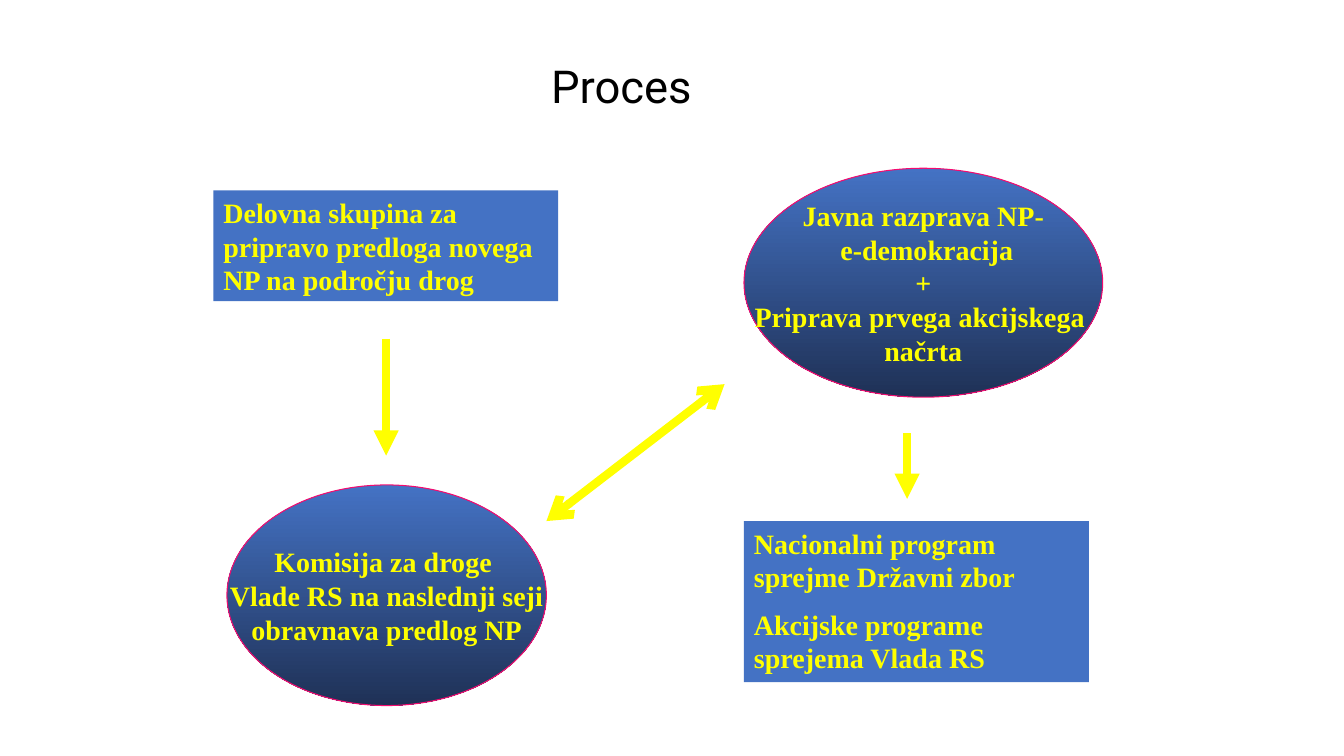
from lxml.etree import SubElement
from pptx import Presentation
from pptx.dml.color import RGBColor
from pptx.enum.shapes import MSO_CONNECTOR, MSO_SHAPE
from pptx.enum.text import MSO_ANCHOR as ANCHOR, PP_ALIGN as ALIGN
from pptx.oxml.ns import qn
from pptx.util import Cm, Pt

COLORS = {
    "box": "4472C4",
    "shade": "1F3156",
    "outline": "F50B6F",
    "accent": "FFFF00",
    "title": "000000",
}


def rgb(name):
    return RGBColor.from_string(COLORS[name])


def write(shape, lines, font="Times New Roman", size=20, color="accent", bold=True,
          align=ALIGN.LEFT, anchor=ANCHOR.TOP, wrap=True, gap=0, spacing=1.0):
    """Fill a shape with one paragraph per line; gap is the space between them in points."""
    frame = shape.text_frame
    frame.word_wrap = wrap
    frame.vertical_anchor = anchor
    for index, line in enumerate(lines):
        paragraph = frame.add_paragraph() if index else frame.paragraphs[0]
        paragraph.alignment = align
        paragraph.line_spacing = spacing
        paragraph.space_before = Pt(gap if index else 0)
        run = paragraph.add_run()
        run.text = line
        run.font.name = font
        run.font.size = Pt(size)
        run.font.bold = bold
        run.font.color.rgb = rgb(color)


prs = Presentation()
prs.slide_width, prs.slide_height = Cm(33.87), Cm(19.05)
slide = prs.slides.add_slide(prs.slide_layouts[6])
shapes = slide.shapes

title = shapes.add_textbox(Cm(10.67), Cm(1.47), Cm(9.98), Cm(1.55))
write(title, ["Proces"], font="Roboto", size=32.4, color="title", bold=False,
      align=ALIGN.CENTER, anchor=ANCHOR.MIDDLE, spacing=0.9)

# Rectangles: left, top, width, height, paragraphs
institutions = [
    (5.38, 4.8, 8.69, 2.79,
     ["Delovna skupina za pripravo predloga novega NP na področju drog"]),
    (18.75, 13.13, 8.69, 4.06,
     ["Nacionalni program sprejme Državni zbor",
      "Akcijske programe sprejema Vlada RS"]),
]
for left, top, width, height, lines in institutions:
    box = shapes.add_shape(MSO_SHAPE.RECTANGLE, Cm(left), Cm(top), Cm(width), Cm(height))
    box.shadow.inherit = False
    box.fill.solid()
    box.fill.fore_color.rgb = rgb("box")
    box.line.fill.background()
    write(box, lines, gap=10)

# Ellipses: left, top, width, height, paragraphs
discussions = [
    (5.72, 12.22, 8.05, 5.56,
     ["Komisija za droge ", "Vlade RS na naslednji seji", "obravnava predlog NP"]),
    (18.75, 4.24, 9.04, 5.77,
     ["Javna razprava NP-", " e-demokracija", "+",
      "Priprava prvega akcijskega ", "načrta"]),
]
for left, top, width, height, lines in discussions:
    oval = shapes.add_shape(MSO_SHAPE.OVAL, Cm(left), Cm(top), Cm(width), Cm(height))
    oval.shadow.inherit = False
    oval.fill.gradient()
    oval.fill.gradient_angle = 270
    for stop, color in zip(oval.fill.gradient_stops, ("box", "shade")):
        stop.color.rgb = rgb(color)
    oval.line.color.rgb = rgb("outline")
    oval.line.width = Pt(0.75)
    write(oval, lines, align=ALIGN.CENTER, anchor=ANCHOR.MIDDLE, wrap=False)

# Arrows: start x, start y, end x, end y, arrowheads
steps = [
    (9.73, 8.53, 9.73, 11.48, {"tailEnd": "triangle"}),
    (13.77, 13.13, 18.26, 9.68, {"headEnd": "arrow", "tailEnd": "arrow"}),
    (22.86, 10.92, 22.86, 12.57, {"tailEnd": "triangle"}),
]
for x1, y1, x2, y2, heads in steps:
    arrow = shapes.add_connector(MSO_CONNECTOR.STRAIGHT, Cm(x1), Cm(y1), Cm(x2), Cm(y2))
    arrow.line.color.rgb = rgb("accent")
    arrow.line.width = Pt(6)
    for end, kind in heads.items():
        SubElement(arrow.line._get_or_add_ln(), qn(f"a:{end}"), type=kind)
    SubElement(arrow._element.spPr, qn("a:effectLst"))

prs.save("out.pptx")
